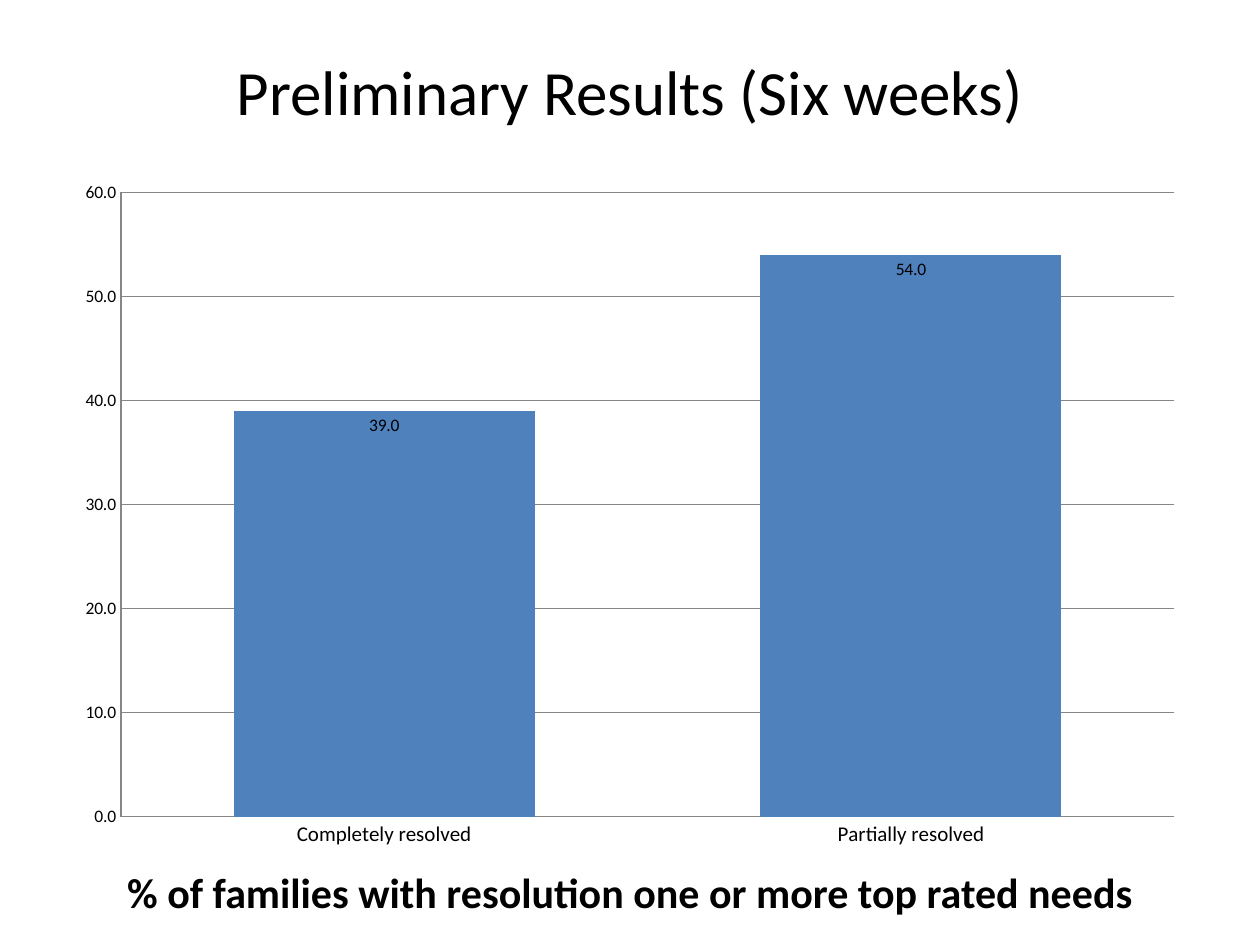
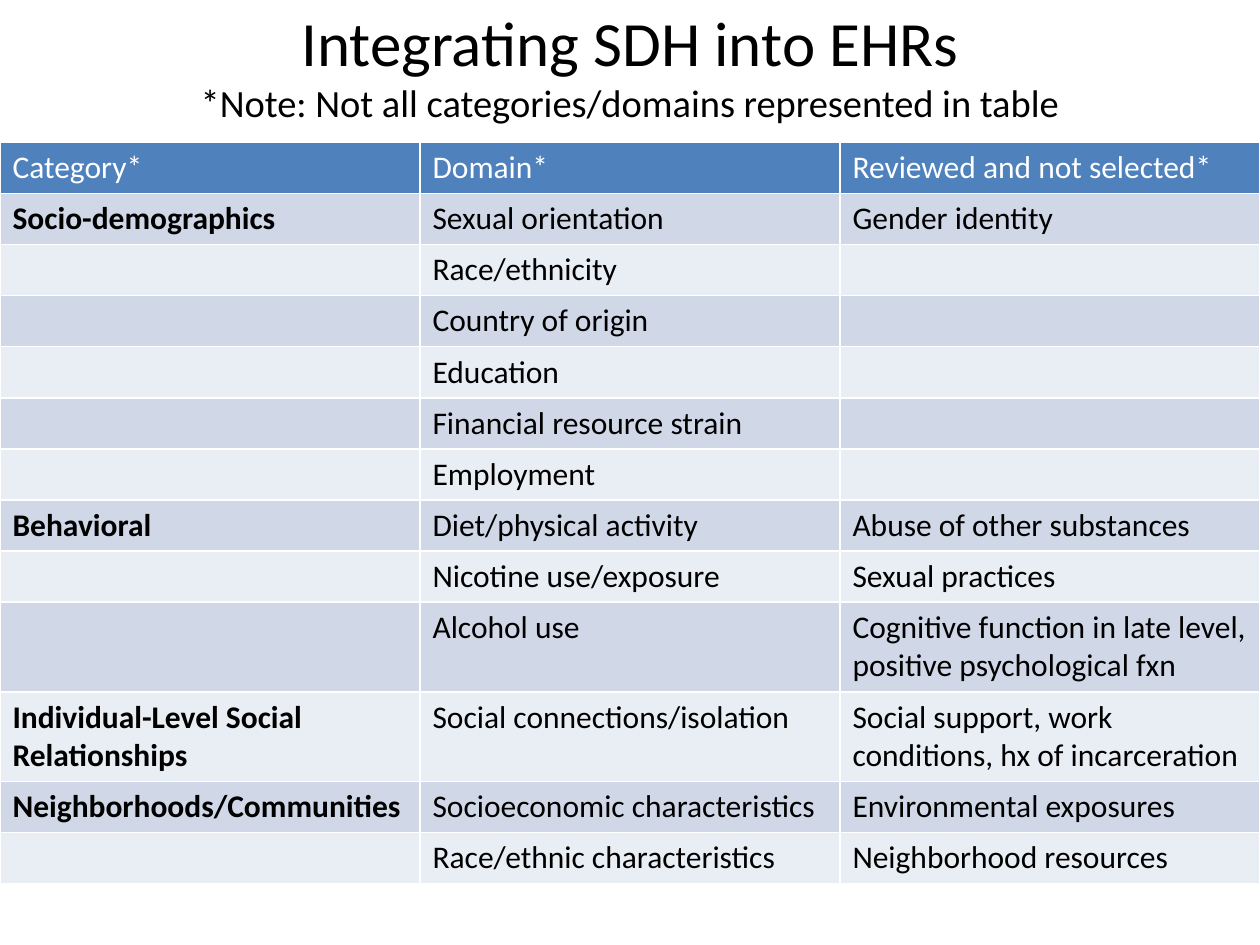
import pptx
import pptx.chart.data
import pptx.dml.color
import pptx.enum.chart
import pptx.enum.text
import pptx.util
from pptx.util import Cm

FONT = "Calibri"
BLACK, WHITE, BLUE, GREY = "000000", "FFFFFF", "4F81BD", "868686"
BANDS = ("D0D8E8", "E9EDF4")
MARGIN, CONTENT_W, TITLE_H = 1.27, 22.86, 3.18

RESULTS_TITLE = [("Preliminary Results (Six weeks)", 36)]
RESULTS = {"Completely resolved": 39, "Partially resolved": 54}
RESULTS_CAPTION = "% of families with resolution one or more top rated needs"

DOMAINS_TITLE = [
    ("Integrating SDH into EHRs", 36),
    ("*Note: Not all categories/domains represented in table", 22),
]
DOMAINS = [
    ("Category*", "Domain*", "Reviewed and not selected*"),
    ("Socio-demographics", "Sexual orientation", "Gender identity"),
    ("", "Race/ethnicity", ""),
    ("", "Country of origin", ""),
    ("", "Education", ""),
    ("", "Financial resource strain", ""),
    ("", "Employment", ""),
    ("Behavioral", "Diet/physical activity", "Abuse of other substances"),
    ("", "Nicotine use/exposure", "Sexual practices"),
    ("", "Alcohol use", "Cognitive function in late level, positive psychological fxn"),
    ("Individual-Level Social Relationships", "Social connections/isolation",
     "Social support, work conditions, hx of incarceration"),
    ("Neighborhoods/Communities", "Socioeconomic characteristics", "Environmental exposures"),
    ("", "Race/ethnic characteristics", "Neighborhood resources"),
]


def rgb(color):
    return pptx.dml.color.RGBColor.from_string(color)


def style_font(font, size, color=BLACK, bold=False):
    font.name = FONT
    font.size = pptx.util.Pt(size)
    font.bold = bold
    font.color.rgb = rgb(color)


def add_run(p, text, size, color=BLACK, bold=False):
    r = p.add_run()
    r.text = text
    style_font(r.font, size, color, bold)


def add_titled_slide(prs, lines, top):
    s = prs.slides.add_slide(prs.slide_layouts[5])
    sp = s.shapes.title
    sp.left, sp.top, sp.width, sp.height = Cm(MARGIN), Cm(top), Cm(CONTENT_W), Cm(TITLE_H)
    tf = sp.text_frame
    tf.auto_size = pptx.enum.text.MSO_AUTO_SIZE.NONE
    tf.vertical_anchor = pptx.enum.text.MSO_ANCHOR.MIDDLE
    p = tf.paragraphs[0]
    p.alignment = pptx.enum.text.PP_ALIGN.CENTER
    for i, (text, size) in enumerate(lines):
        if i:
            p.add_line_break()
        add_run(p, text, size)
    return s


def add_results_chart(s):
    data = pptx.chart.data.CategoryChartData(number_format="###0.0")
    data.categories = list(RESULTS)
    data.add_series("Series 1", list(RESULTS.values()))
    chart = s.shapes.add_chart(
        pptx.enum.chart.XL_CHART_TYPE.COLUMN_CLUSTERED,
        Cm(MARGIN), Cm(3.4), Cm(CONTENT_W), Cm(13.95), data).chart
    style_font(chart.font, 10)
    chart.has_legend = False
    chart.has_title = False

    for axis, size in ((chart.category_axis, 12), (chart.value_axis, 10)):
        axis.major_tick_mark = pptx.enum.chart.XL_TICK_MARK.NONE
        axis.format.line.color.rgb = rgb(GREY)
        style_font(axis.tick_labels.font, size)
    axis = chart.value_axis
    axis.minimum_scale, axis.maximum_scale, axis.major_unit = 0, 60, 10
    axis.major_gridlines.format.line.color.rgb = rgb(GREY)
    axis.tick_labels.number_format = "###0.0"
    axis.tick_labels.number_format_is_linked = False

    plot = chart.plots[0]
    plot.gap_width, plot.overlap = 75, 40
    plot.vary_by_categories = False
    fill = plot.series[0].format.fill
    fill.solid()
    fill.fore_color.rgb = rgb(BLUE)
    plot.has_data_labels = True
    labels = plot.data_labels
    labels.show_value = True
    labels.position = pptx.enum.chart.XL_LABEL_POSITION.INSIDE_END
    labels.number_format = "###0.0"
    labels.number_format_is_linked = False
    style_font(labels.font, 10)


def add_caption(s):
    sp = s.shapes.add_textbox(Cm(MARGIN), Cm(17.35), Cm(CONTENT_W), Cm(1.28))
    tf = sp.text_frame
    tf.word_wrap = True
    tf.auto_size = pptx.enum.text.MSO_AUTO_SIZE.SHAPE_TO_FIT_TEXT
    p = tf.paragraphs[0]
    p.alignment = pptx.enum.text.PP_ALIGN.CENTER
    add_run(p, RESULTS_CAPTION, 24, bold=True)


def add_domain_table(s, width):
    row_h = Cm(1.03)
    table = s.shapes.add_table(len(DOMAINS), len(DOMAINS[0]), 0, Cm(2.87),
                               width, row_h * len(DOMAINS)).table
    for i, texts in enumerate(DOMAINS):
        table.rows[i].height = row_h
        header = i == 0
        for j, text in enumerate(texts):
            cell = table.cell(i, j)
            cell.fill.solid()
            cell.fill.fore_color.rgb = rgb(BLUE if header else BANDS[(i - 1) % 2])
            if text:
                add_run(cell.text_frame.paragraphs[0], text, 18,
                        WHITE if header else BLACK, j == 0 and not header)


def main():
    prs = pptx.Presentation()
    prs.slide_width, prs.slide_height = Cm(25.4), Cm(19.05)

    s = add_titled_slide(prs, RESULTS_TITLE, 0.23)
    add_results_chart(s)
    add_caption(s)

    s = add_titled_slide(prs, DOMAINS_TITLE, -0.3)
    add_domain_table(s, prs.slide_width)

    prs.save("out.pptx")


if __name__ == "__main__":
    main()
